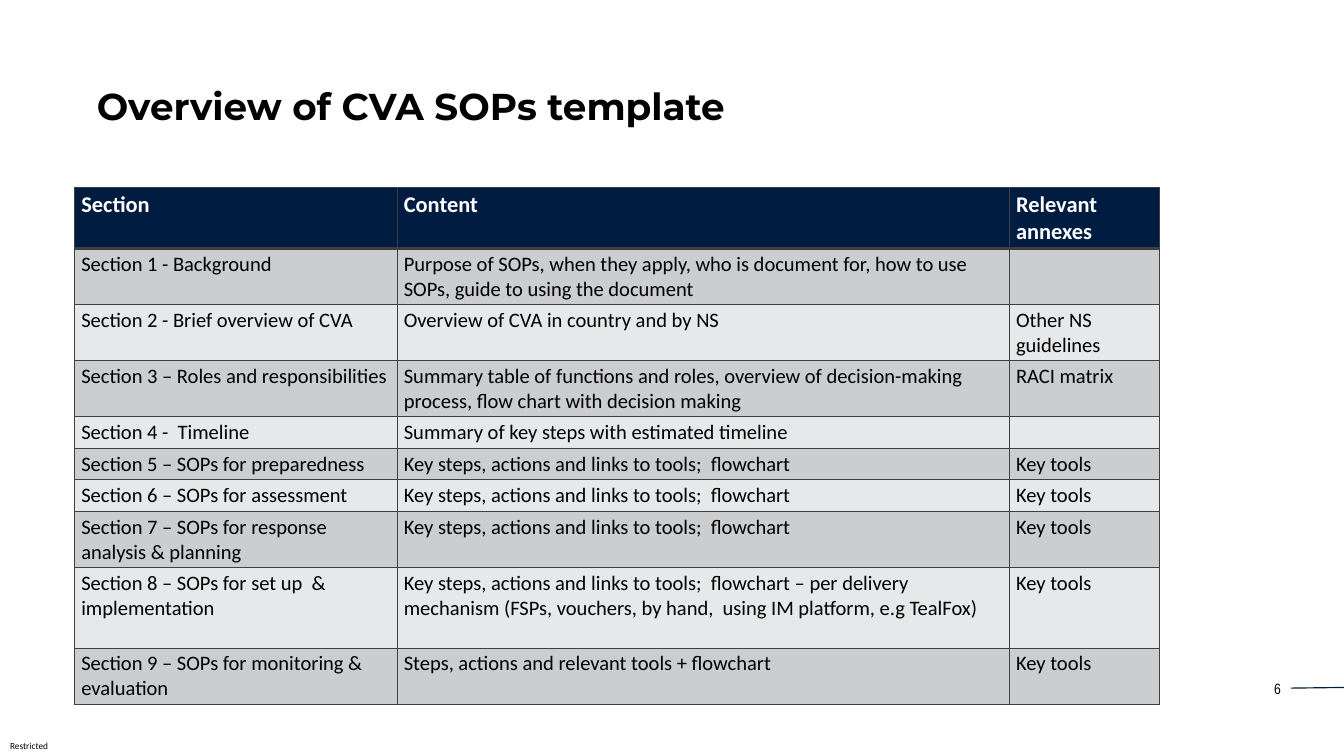
import pptx
import pptx.dml.color
import pptx.enum.shapes
import pptx.enum.text
import pptx.oxml
import pptx.oxml.ns
import pptx.util
from pptx.dml.color import RGBColor
from pptx.util import Inches, Pt

# Content
TITLE = "Overview of CVA SOPs template"
CLASSIFICATION = "Restricted"
PAGE_NUMBER = "6"
KEY_STEPS = "Key steps, actions and links to tools;  flowchart"
HEADER = ("Section", "Content", "Relevant annexes")
SECTIONS = [
    ("Section 1 - Background",
     "Purpose of SOPs, when they apply, who is document for, how to use SOPs, "
     "guide to using the document", ""),
    ("Section 2 - Brief overview of CVA", "Overview of CVA in country and by NS",
     "Other NS guidelines"),
    ("Section 3 – Roles and responsibilities",
     "Summary table of functions and roles, overview of decision-making process, "
     "flow chart with decision making", "RACI matrix"),
    ("Section 4 -  Timeline", "Summary of key steps with estimated timeline", ""),
    ("Section 5 – SOPs for preparedness", KEY_STEPS, "Key tools"),
    ("Section 6 – SOPs for assessment", KEY_STEPS, "Key tools"),
    ("Section 7 – SOPs for response analysis & planning", KEY_STEPS, "Key tools"),
    ("Section 8 – SOPs for set up  & implementation",
     KEY_STEPS + " – per delivery mechanism (FSPs, vouchers, by hand,  "
     "using IM platform, e.g TealFox)", "Key tools"),
    ("Section 9 – SOPs for monitoring & evaluation",
     "Steps, actions and relevant tools + flowchart", "Key tools"),
]

# Layout and colours
COLUMN_WIDTHS = (4.8, 9.11, 2.23)
ONE_LINE, TWO_LINES, THREE_LINES = 0.47, 0.83, 1.2
ROW_HEIGHTS = (0.91, TWO_LINES, TWO_LINES, TWO_LINES, ONE_LINE, ONE_LINE, ONE_LINE,
               TWO_LINES, THREE_LINES, TWO_LINES)
NAVY = RGBColor(0x00, 0x1D, 0x41)
WHITE = RGBColor(0xFF, 0xFF, 0xFF)
BLACK = RGBColor(0x00, 0x00, 0x00)
BORDER = RGBColor(0x3F, 0x3F, 0x3F)
BANDS = (RGBColor(0xCC, 0xCD, 0xCF), RGBColor(0xE7, 0xE8, 0xE9))


def format_text(text_frame, font_name, size, color, bold=False):
    for paragraph in text_frame.paragraphs:
        for run in paragraph.runs:
            run.font.name = font_name
            run.font.size = Pt(size)
            run.font.bold = bold
            run.font.color.rgb = color


def set_borders(cell, widths):
    """Draw the left, right, top and bottom borders, widths in points."""
    properties = cell._tc.get_or_add_tcPr()
    for position, (side, width) in enumerate(zip("LRTB", widths)):
        properties.insert(position, pptx.oxml.parse_xml(
            f'<a:ln{side} {pptx.oxml.ns.nsdecls("a")} w="{Pt(width)}">'
            f'<a:solidFill><a:srgbClr val="{BORDER}"/></a:solidFill></a:ln{side}>'))


def add_label(slide, text, box, font_name, size):
    label = slide.shapes.add_textbox(*(Inches(length) for length in box))
    label.text_frame.word_wrap = True
    label.text_frame.text = text
    format_text(label.text_frame, font_name, size, BLACK)
    return label.text_frame


def add_title(slide):
    title = slide.shapes.title
    title.left, title.top = Inches(1.34), Inches(1.27)
    title.width, title.height = Inches(12.32), Inches(1.25)
    frame = title.text_frame
    frame.text = TITLE
    frame.auto_size = pptx.enum.text.MSO_AUTO_SIZE.NONE
    frame.vertical_anchor = pptx.enum.text.MSO_ANCHOR.TOP
    frame.paragraphs[0].alignment = pptx.enum.text.PP_ALIGN.LEFT
    frame.paragraphs[0].line_spacing = 0.9
    format_text(frame, "Montserrat", 40, BLACK, bold=True)


def add_sections_table(slide):
    rows = [HEADER] + SECTIONS
    table = slide.shapes.add_table(
        len(rows), len(HEADER), Inches(1.11), Inches(2.79),
        Inches(sum(COLUMN_WIDTHS)), Inches(sum(ROW_HEIGHTS))).table
    for column, width in zip(table.columns, COLUMN_WIDTHS):
        column.width = Inches(width)
    for row_index, (texts, height) in enumerate(zip(rows, ROW_HEIGHTS)):
        table.rows[row_index].height = Inches(height)
        is_header = row_index == 0
        for column_index, text in enumerate(texts):
            cell = table.cell(row_index, column_index)
            cell.text = text
            cell.fill.solid()
            if is_header:
                cell.fill.fore_color.rgb = NAVY
                format_text(cell.text_frame, "Calibri", 24, WHITE, bold=True)
            else:
                cell.fill.fore_color.rgb = BANDS[(row_index - 1) % 2]
                format_text(cell.text_frame, "Calibri", 22, BLACK)
            set_borders(cell, (1, 1, 3 if row_index == 1 else 1, 3 if is_header else 1))


def add_footer(slide):
    # Classification mark
    frame = add_label(slide, CLASSIFICATION, (0, 10.96, 0.88, 0.29), "Calibri", 10)
    frame.margin_left = Inches(0.15)
    frame.margin_right = frame.margin_top = frame.margin_bottom = 0
    frame.vertical_anchor = pptx.enum.text.MSO_ANCHOR.MIDDLE

    # Page number and its rule
    frame = add_label(slide, PAGE_NUMBER, (18.44, 10.06, 0.72, 0.37), "Arial Narrow", 16)
    frame.paragraphs[0].alignment = pptx.enum.text.PP_ALIGN.RIGHT
    rule = slide.shapes.add_connector(
        pptx.enum.shapes.MSO_CONNECTOR.STRAIGHT,
        Inches(19.21), Inches(10.24), Inches(20), Inches(10.23))
    rule.line.color.rgb = NAVY
    rule.line.width = Pt(1.25)
    rule._element.spPr.append(pptx.oxml.parse_xml(
        f'<a:effectLst {pptx.oxml.ns.nsdecls("a")}/>'))


def main():
    presentation = pptx.Presentation()
    presentation.slide_width = Inches(20)
    presentation.slide_height = Inches(11.25)
    slide = presentation.slides.add_slide(presentation.slide_layouts[5])
    add_footer(slide)
    add_title(slide)
    add_sections_table(slide)
    presentation.save("out.pptx")


if __name__ == "__main__":
    main()
